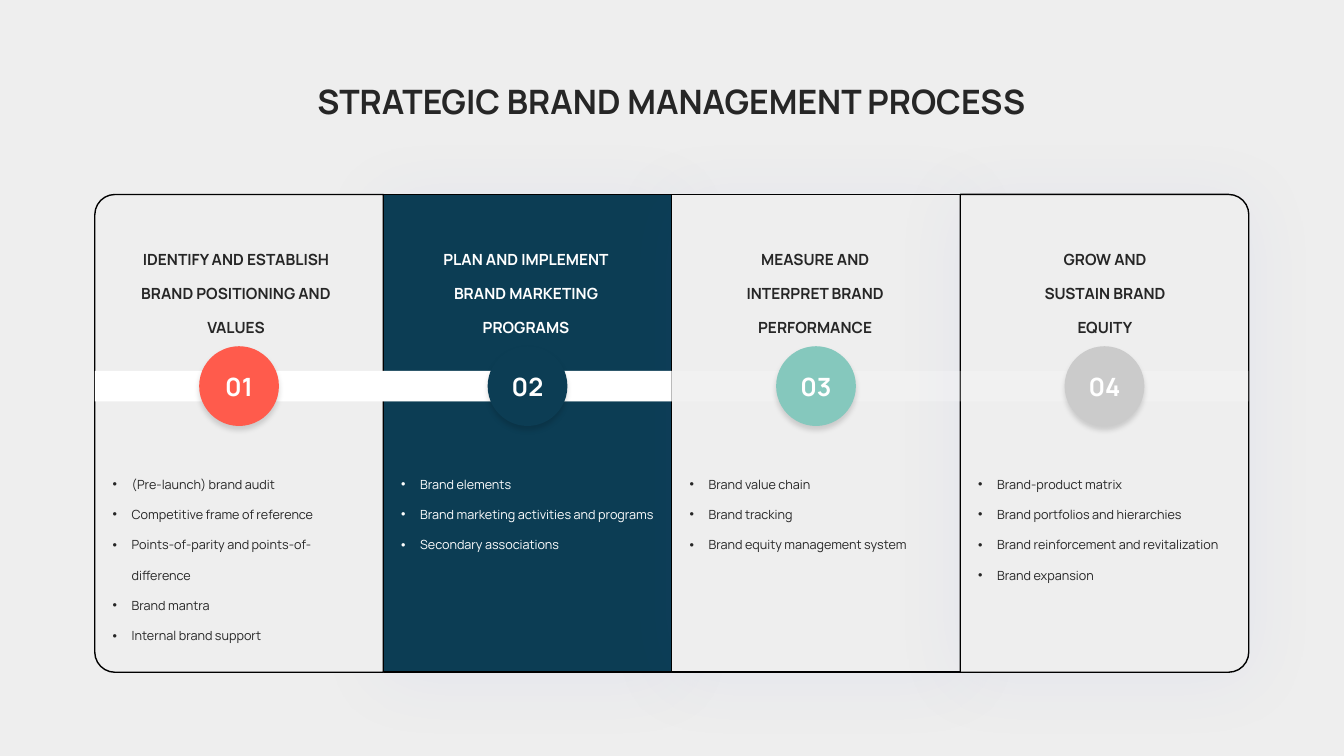
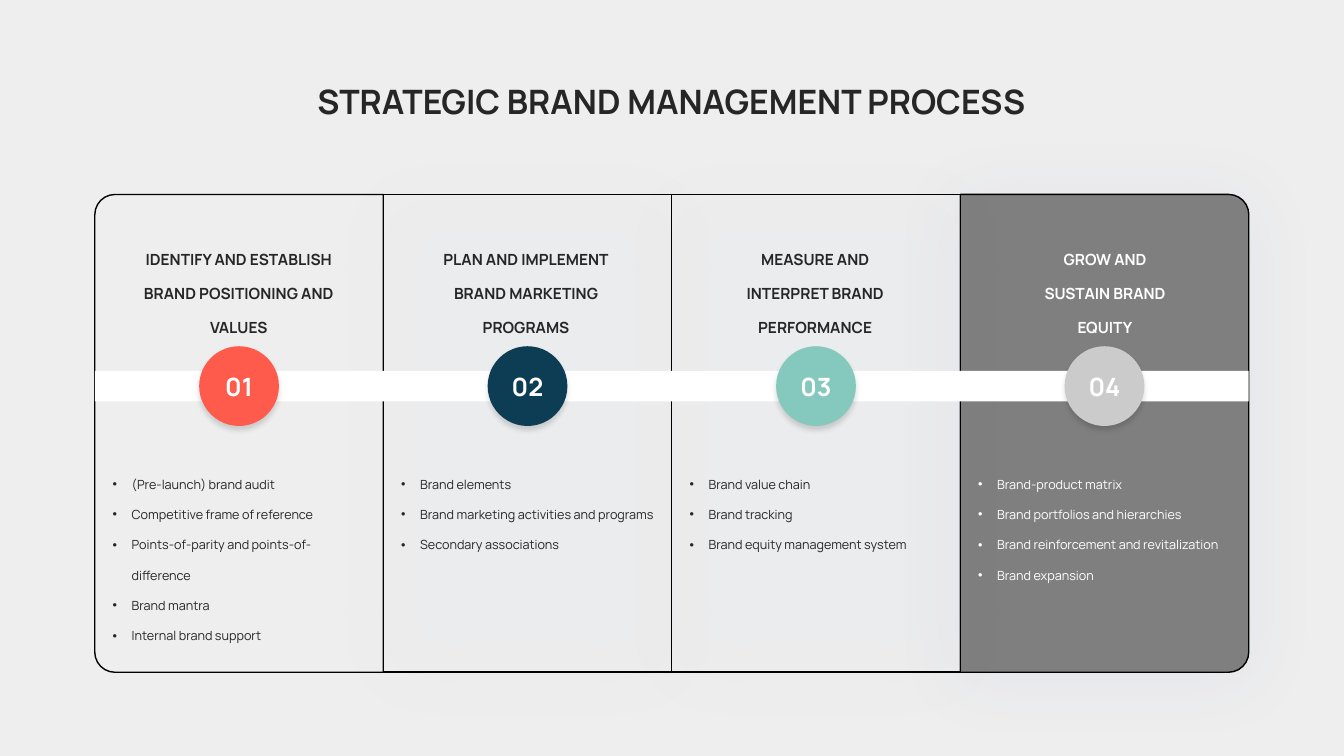
"""Build two slides that walk through a four-step brand process."""
from copy import deepcopy
from dataclasses import dataclass

from lxml import etree
from pptx import Presentation, util as u
from pptx.dml.color import RGBColor
from pptx.enum import shapes, text
from pptx.oxml.ns import qn

PALE = RGBColor(0xEE, 0xEE, 0xEE)
INK = RGBColor(0x26, 0x26, 0x26)
WHITE = RGBColor(0xFF, 0xFF, 0xFF)
BLACK = RGBColor(0x00, 0x00, 0x00)
CORAL = RGBColor(0xFF, 0x5B, 0x4C)
NAVY = RGBColor(0x0C, 0x3D, 0x54)
MINT = RGBColor(0x85, 0xC8, 0xBD)
SILVER = RGBColor(0xCB, 0xCB, 0xCB)
GREY = RGBColor(0x7F, 0x7F, 0x7F)
BLUE = RGBColor(0x35, 0x53, 0xD3)

FACE = "Manrope"
TITLE = "STRATEGIC BRAND MANAGEMENT PROCESS"
LEFT, TOP, WIDE, HIGH = 2.39, 4.9, 7.27, 12.04
MID, BAND, DISC = 9.73, 0.77, 2.01
INDENT = 0.48
FORM = shapes.MSO_SHAPE


@dataclass(frozen=True)
class Box:
    left: float
    top: float
    wide: float
    high: float

    def cm(self) -> tuple:
        return tuple(u.Cm(n) for n in (self.left, self.top, self.wide, self.high))


@dataclass(frozen=True)
class Shade:
    color: RGBColor
    alpha: int
    blur: int
    dist: int


@dataclass(frozen=True)
class Step:
    head: str
    left: float
    wide: float
    color: RGBColor
    items: tuple[str, ...]


@dataclass(frozen=True)
class View:
    active: int
    fill: RGBColor
    alpha: int
    shift: float


GLOW = Shade(BLUE, 5, 52, 4)
DROP = Shade(BLACK, 15, 4, 3)

STEPS = (
    Step("IDENTIFY AND ESTABLISH BRAND POSITIONING AND VALUES", 3.3, 5.44, CORAL,
         ("(Pre-launch) brand audit", "Competitive frame of reference",
          "Points-of-parity and points-of-difference", "Brand mantra",
          "Internal brand support")),
    Step("PLAN AND IMPLEMENT\nBRAND MARKETING PROGRAMS", 10.26, 6, NAVY,
         ("Brand elements", "Brand marketing activities and programs",
          "Secondary associations")),
    Step("MEASURE AND\nINTERPRET BRAND\nPERFORMANCE", 17.98, 5.13, MINT,
         ("Brand value chain", "Brand tracking", "Brand equity management system")),
    Step("GROW AND SUSTAIN BRAND EQUITY", 25.73, 4.24, SILVER,
         ("Brand-product matrix", "Brand portfolios and hierarchies",
          "Brand reinforcement and revitalization", "Brand expansion")),
)
VIEWS = (View(1, NAVY, 100, -0.07), View(3, GREY, 18, 0))


def add(node, tag: str, **attrs):
    return etree.SubElement(node, qn(tag), attrs)


def draw(slide, form, box: Box, fill: RGBColor, alpha: int = 100,
         line: bool = False, shade: Shade | None = None):
    shape = slide.shapes.add_shape(form, *box.cm())
    shape.fill.solid()
    shape.fill.fore_color.rgb = fill
    props = shape._element.spPr
    if alpha < 100:
        tint = props.find(qn("a:solidFill"))[0]
        add(tint, "a:alpha", val=str(alpha * 1000))
    if line:
        shape.line.color.rgb = BLACK
        shape.line.width = u.Pt(1)
    else:
        shape.line.fill.background()
    shape.shadow.inherit = False
    if shade:
        outer = add(props.find(qn("a:effectLst")), "a:outerShdw",
                    blurRad=str(u.Pt(shade.blur)), dist=str(u.Pt(shade.dist)),
                    dir="5400000", algn="t", rotWithShape="0")
        tint = add(outer, "a:srgbClr", val=str(shade.color))
        add(tint, "a:alpha", val=str(shade.alpha * 1000))
    return shape


def style(para, size: int, color: RGBColor, bold: bool = False) -> None:
    for run in para.runs:
        run.font.name = FACE
        run.font.size = u.Pt(size)
        run.font.bold = bold
        run.font.color.rgb = color
    for gap in para._p.findall(qn("a:br")):
        gap.append(deepcopy(para.runs[0]._r.rPr))


def center(frame, words: str, size: int, color: RGBColor) -> None:
    para = frame.paragraphs[0]
    para.text = words
    para.alignment = text.PP_ALIGN.CENTER
    style(para, size, color, True)


def write(slide, box: Box, inset: bool = False):
    frame = slide.shapes.add_textbox(*box.cm()).text_frame
    frame.word_wrap = True
    frame.auto_size = text.MSO_AUTO_SIZE.SHAPE_TO_FIT_TEXT
    if not inset:
        frame.margin_left = frame.margin_right = 0
        frame.margin_top = frame.margin_bottom = 0
    return frame


def panel(slide, index: int, view: View) -> None:
    left = LEFT + index * WIDE
    fill, alpha = (view.fill, 100) if index == view.active else (PALE, view.alpha)
    shade = GLOW if index else None
    if index in (0, len(STEPS) - 1):
        box = Box(left + (WIDE - HIGH) / 2, TOP + (HIGH - WIDE) / 2, HIGH, WIDE)
        shape = draw(slide, FORM.ROUND_2_SAME_RECTANGLE, box, fill, alpha, True, shade)
        shape.adjustments[0] = 0.07
        shape.rotation = 90 if index else 270
    else:
        draw(slide, FORM.RECTANGLE, Box(left, TOP, WIDE, HIGH), fill, alpha, True, shade)


def band(slide, count: int, alpha: int = 100) -> None:
    box = Box(LEFT, MID - BAND / 2, count * WIDE, BAND)
    draw(slide, FORM.RECTANGLE, box, WHITE, alpha)


def bullets(slide, index: int, items: tuple[str, ...], color: RGBColor) -> None:
    box = Box(LEFT + 0.45 + index * WIDE, 11.63, 6.43, 0.6 + 0.63 * len(items))
    frame = write(slide, box)
    for row, item in enumerate(items):
        para = frame.add_paragraph() if row else frame.paragraphs[0]
        para.text = item
        para.line_spacing = 2.0
        props = para._p.get_or_add_pPr()
        props.set("marL", str(u.Cm(INDENT)))
        props.set("indent", str(-u.Cm(INDENT)))
        add(add(props, "a:buClr"), "a:srgbClr", val=str(color))
        add(props, "a:buFont", typeface="Arial")
        add(props, "a:buChar", char="•")
        style(para, 9, color)


def column(slide, index: int, step: Step, view: View) -> None:
    color = WHITE if index == view.active else INK
    left = step.left + (0 if index else view.shift)
    frame = write(slide, Box(left, 5.77, step.wide, 2.34), True)
    center(frame, step.head, 11, color)
    frame.paragraphs[0].line_spacing = 1.85
    bullets(slide, index, step.items, color)
    box = Box(LEFT + (index + 0.5) * WIDE - DISC / 2, MID - DISC / 2, DISC, DISC)
    disc = draw(slide, FORM.OVAL, box, step.color, shade=DROP)
    disc.text_frame.vertical_anchor = text.MSO_ANCHOR.MIDDLE
    disc.text_frame.word_wrap = False
    center(disc.text_frame, f"{index + 1:02}", 18, WHITE)


def build(deck, view: View) -> None:
    slide = deck.slides.add_slide(deck.slide_layouts[6])
    slide.background.fill.solid()
    slide.background.fill.fore_color.rgb = PALE
    count = len(STEPS)
    for index in sorted(range(count), key=lambda n: n != view.active):
        panel(slide, index, view)
    if view.active + 1 < count:
        band(slide, count, 23)
    band(slide, view.active + 1)
    frame = write(slide, Box(7.16, 2.03, 19.51, 1.02))
    frame.vertical_anchor = text.MSO_ANCHOR.MIDDLE
    center(frame, TITLE, 24, INK)
    for index, step in enumerate(STEPS):
        column(slide, index, step, view)


def main() -> None:
    deck = Presentation()
    deck.slide_width, deck.slide_height = u.Cm(33.87), u.Cm(19.05)
    for view in VIEWS:
        build(deck, view)
    deck.save("out.pptx")


if __name__ == "__main__":
    main()
